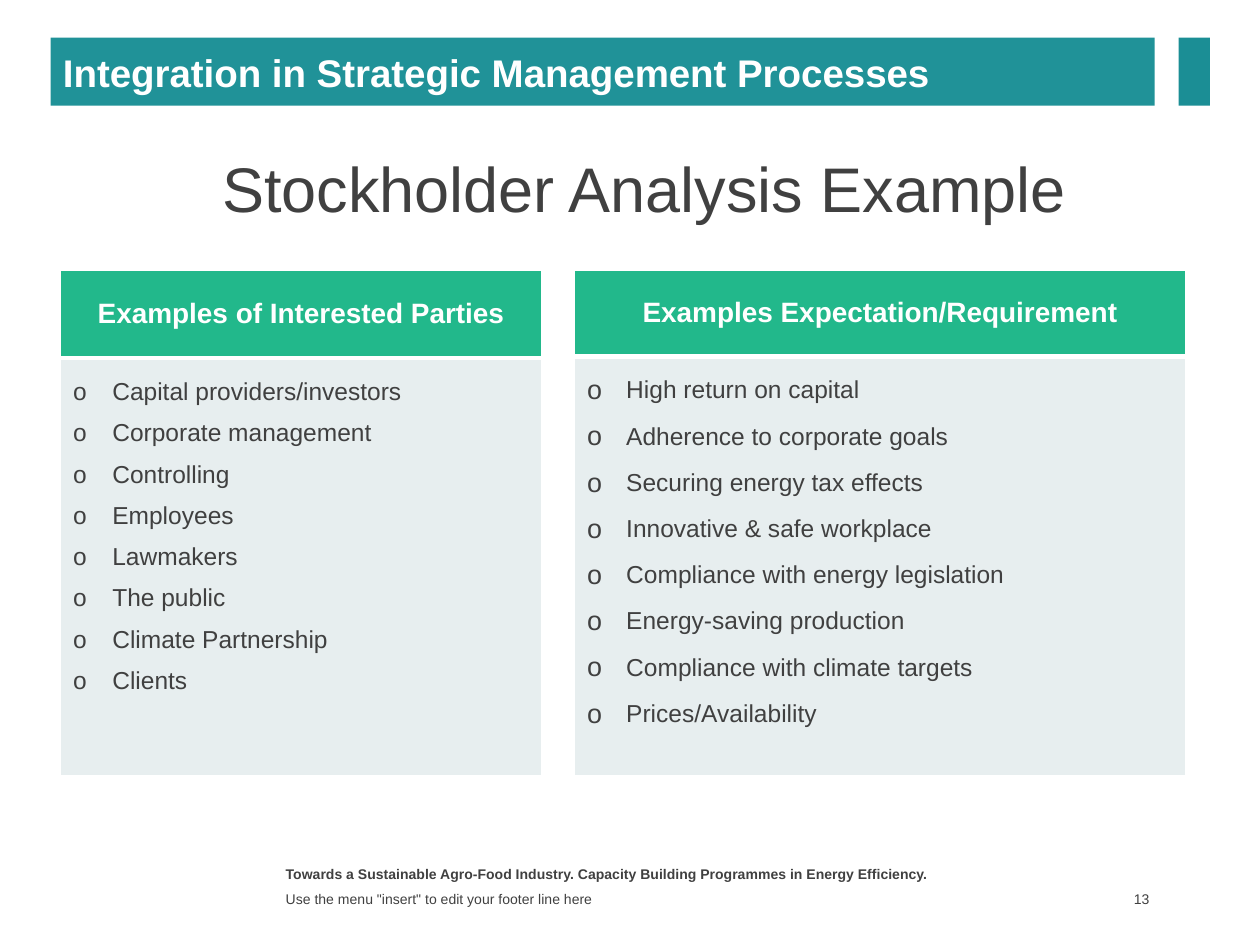
from pptx import Presentation
from pptx.dml.color import RGBColor
from pptx.enum.shapes import MSO_SHAPE as Shape
from pptx.enum.text import MSO_ANCHOR as Anchor, PP_ALIGN as Align
from pptx.oxml.ns import qn
from pptx.util import Cm, Pt
from lxml.etree import SubElement as Sub

WHITE = RGBColor(0xFF, 0xFF, 0xFF)
DARK = RGBColor(0x40, 0x40, 0x40)
TEAL = RGBColor(0x20, 0x92, 0x98)
DEEP = RGBColor(0x1B, 0x8E, 0x95)
GREEN = RGBColor(0x22, 0xB8, 0x8B)
PALE = RGBColor(0xE7, 0xEE, 0xEF)

PARTIES = [
    "Capital providers/investors", "Corporate management", "Controlling",
    "Employees", "Lawmakers", "The public", "Climate Partnership", "Clients",
]
NEEDS = [
    "High return on capital", "Adherence to corporate goals",
    "Securing energy tax effects", "Innovative & safe workplace",
    "Compliance with energy legislation", "Energy-saving production",
    "Compliance with climate targets", "Prices/Availability",
]


def add_run(para, text, size, color, bold=False):
    run = para.add_run()
    run.text = text
    font = run.font
    font.name, font.size, font.bold = "Arial", Pt(size), bold
    font.color.rgb = color


def add_text(slide, box, text, size, bold=False, align=Align.LEFT, anchor=Anchor.MIDDLE):
    frame = slide.shapes.add_textbox(*map(Cm, box)).text_frame
    frame.word_wrap = True
    frame.vertical_anchor = anchor
    para = frame.paragraphs[0]
    para.alignment = align
    add_run(para, text, size, DARK, bold)
    return frame


def add_bar(slide, box, fill):
    bar = slide.shapes.add_shape(Shape.RECTANGLE, *map(Cm, box))
    bar.shadow.inherit = False
    bar.fill.solid()
    bar.fill.fore_color.rgb = fill
    bar.line.fill.background()
    return bar


def add_header(slide, left, top, width, height):
    frame = add_bar(slide, (left, top, width - 1.11, height), TEAL).text_frame
    frame.vertical_anchor = Anchor.MIDDLE
    para = frame.paragraphs[0]
    para.alignment = Align.LEFT
    add_run(para, "Integration in Strategic Management Processes", 22, WHITE, True)
    add_bar(slide, (left + width - 0.63, top, 0.63, height), DEEP)


def paint_cell(cell, fill, top, base):
    props = cell._tc.get_or_add_tcPr()
    for side, width in (("L", 1), ("R", 1), ("T", top), ("B", base)):
        line = Sub(props, qn(f"a:ln{side}"), w=str(Pt(width)))
        Sub(Sub(line, qn("a:solidFill")), qn("a:srgbClr"), val=str(WHITE))
    cell.fill.solid()
    cell.fill.fore_color.rgb = fill


def add_bullet(para, scale):
    props = para._p.get_or_add_pPr()
    props.set("marL", str(Cm(0.79)))
    props.set("indent", str(-Cm(0.79)))
    Sub(props, qn("a:buSzPct"), val=str(scale * 1000))
    Sub(props, qn("a:buFont"), typeface="Arial")
    Sub(props, qn("a:buChar"), char="o")


def add_list(slide, box, head, title, items, gap, scale):
    left, top, width, height = box
    table = slide.shapes.add_table(2, 1, *map(Cm, box)).table
    table.horz_banding = False
    table.columns[0].width = Cm(width)
    table.rows[0].height = Cm(head)
    table.rows[1].height = Cm(height - head)
    name, body = table.cell(0, 0), table.cell(1, 0)
    paint_cell(name, GREEN, 1, 3)
    paint_cell(body, PALE, 3, 1)
    name.vertical_anchor = Anchor.MIDDLE
    para = name.text_frame.paragraphs[0]
    para.alignment = Align.CENTER
    add_run(para, title, 16, WHITE, True)
    frame = body.text_frame
    for rank, item in enumerate(items):
        para = frame.add_paragraph() if rank else frame.paragraphs[0]
        add_bullet(para, scale)
        para.line_spacing = 1.5
        para.space_before = Pt(gap if rank else 0)
        add_run(para, item, 14, DARK)


def add_footer(slide, left, top, width, height):
    add_text(slide, (left, top, 13.97, 0.53),
             "Towards a Sustainable Agro-Food Industry. "
             "Capacity Building Programmes in Energy Efficiency.",
             8, bold=True, anchor=Anchor.TOP)
    add_text(slide, (left, top + 0.56, 13.97, height - 0.56),
             'Use the menu "insert" to edit your footer line here', 8)
    page = add_text(slide, (left + width - 1.42, top + 0.54, 1.42, 0.51),
                    "13", 8, align=Align.RIGHT)
    page.margin_right = Cm(0.1)


def main():
    deck = Presentation()
    deck.slide_width, deck.slide_height = Cm(25.4), Cm(19.05)
    slide = deck.slides.add_slide(deck.slide_layouts[6])
    add_header(slide, 1.02, 0.76, 23.37, 1.37)
    add_text(slide, (0.38, 3.38, 25.22, 0.79), "Stockholder Analysis Example",
             36, align=Align.CENTER)
    add_list(slide, (1.22, 5.44, 9.7, 10.19), 1.78,
             "Examples of Interested Parties", PARTIES, 0, 100)
    add_list(slide, (11.58, 5.44, 12.32, 10.19), 1.75,
             "Examples Expectation/Requirement", NEEDS, 2.8, 110)
    add_footer(slide, 5.51, 17.32, 17.76, 1.04)
    deck.save("out.pptx")


if __name__ == "__main__":
    main()
